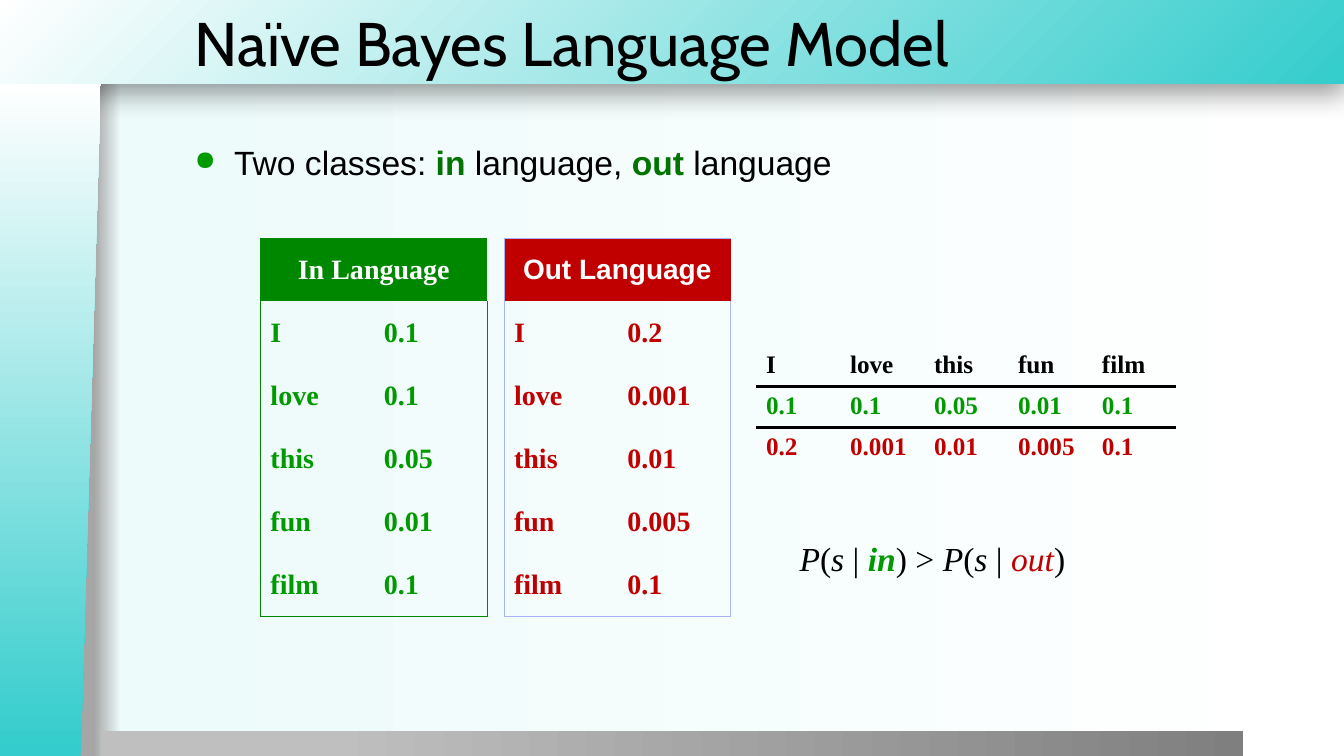
import pptx
import pptx.util
import pptx.oxml
from pptx.dml.color import RGBColor
from pptx.enum.shapes import MSO_SHAPE
from pptx.enum.text import MSO_ANCHOR, PP_ALIGN
from pptx.oxml.ns import nsdecls, qn


class Theme:
    black, white = "000000", "FFFFFF"
    teal, mist = "34CCCC", "EDFBFB"
    shade, bar_light, bar_dark = "A6A6A6", "BFBFBF", "7F7F7F"
    green, frame_green, bold_green = "009900", "008700", "007300"
    red, frame_blue = "C00000", "A7B2FB"
    title_font, body_font, math_font = "Cabin", "Arial", "Times New Roman"
    title, body, cell, small = 44, 24, 20, 18


T = Theme

# Content: runs are (text, colour, bold, italic)
TITLE = [("Naïve Bayes Language Model", T.black, False, False)]
CLASSES = [
    ("Two classes: ", T.black, False, False),
    ("in", T.bold_green, True, False),
    (" language, ", T.black, False, False),
    ("out", T.bold_green, True, False),
    (" language", T.black, False, False),
]
COMPARISON = [
    ("P", T.black, False, True), ("(", T.black, False, False),
    ("s", T.black, False, True), (" | ", T.black, False, False),
    ("in", T.green, True, True), (") > ", T.black, False, False),
    ("P", T.black, False, True), ("(", T.black, False, False),
    ("s", T.black, False, True), (" | ", T.black, False, False),
    ("out", T.red, False, True), (")", T.black, False, False),
]
WORDS = ["I", "love", "this", "fun", "film"]
IN_PROBS = ["0.1", "0.1", "0.05", "0.01", "0.1"]
OUT_PROBS = ["0.2", "0.001", "0.01", "0.005", "0.1"]

# Heading, probabilities, left column, heading fill, frame, text colour, heading font
MODELS = [
    ("In Language", IN_PROBS, 31, T.frame_green, T.frame_green, T.green, T.math_font),
    ("Out Language", OUT_PROBS, 60, T.red, T.frame_blue, T.red, T.body_font),
]
SENTENCE = [(WORDS, T.black), (IN_PROBS, T.green), (OUT_PROBS, T.red)]

# Slide grid: 160 columns by 90 rows
COLS, ROWS = 160, 90
prs = pptx.Presentation()
prs.slide_width = pptx.util.Inches(13.333)
prs.slide_height = pptx.util.Inches(7.5)
UNIT = prs.slide_height / ROWS
NO_STYLE = "{2D5ABB26-0587-4C30-8999-92F81FD0307C}"


def grid(*values):
    return [round(v * UNIT) for v in values]


def set_gradient(fill, holder, stops, corner=False):
    """Gradient along the x axis, or outwards from the bottom right corner."""
    fill.gradient()
    old = next(holder.iter(qn("a:gradFill")))
    marks = "".join(
        f'<a:gs pos="{pos * 1000}"><a:srgbClr val="{color}"/></a:gs>' for pos, color in stops)
    way = ('<a:path path="circle"><a:fillToRect l="100000" t="100000"/></a:path>'
           if corner else '<a:lin ang="0" scaled="0"/>')
    old.getparent().replace(old, pptx.oxml.parse_xml(
        f'<a:gradFill {nsdecls("a")} rotWithShape="1"><a:gsLst>{marks}</a:gsLst>{way}</a:gradFill>'))


def add_panel(s, kind, box, stops, corner=False):
    sp = s.shapes.add_shape(kind, *grid(*box))
    sp.shadow.inherit = False
    sp.line.fill.background()
    set_gradient(sp.fill, sp._element.spPr, stops, corner)
    return sp


def style_run(r, font, size, color, bold=False, italic=False):
    r.font.name, r.font.size = font, pptx.util.Pt(size)
    r.font.bold, r.font.italic = bold, italic
    r.font.color.rgb = RGBColor.from_string(color)


def add_text(s, box, runs, font, size, anchor=MSO_ANCHOR.TOP):
    tf = s.shapes.add_textbox(*grid(*box)).text_frame
    tf.word_wrap, tf.vertical_anchor = True, anchor
    p = tf.paragraphs[0]
    for text, *look in runs:
        r = p.add_run()
        r.text = text
        style_run(r, font, size, *look)
    return p


def add_plain_table(s, rows, cols, box):
    frame = s.shapes.add_table(rows, cols, *grid(*box))
    tbl = frame.table
    tbl.first_row = tbl.horz_banding = False
    next(frame._element.iter(qn("a:tableStyleId"))).text = NO_STYLE
    return tbl


def fill_cell(cell, text, font, size, color, fill=None):
    cell.text = text
    for r in cell.text_frame.paragraphs[0].runs:
        style_run(r, font, size, color, bold=True)
    if fill:
        cell.fill.solid()
        cell.fill.fore_color.rgb = RGBColor.from_string(fill)
    else:
        cell.fill.background()


def set_borders(cell, sides, color, width):
    tcPr = cell._tc.get_or_add_tcPr()
    for side in "LRTB":
        if side in sides:
            tcPr.append(pptx.oxml.parse_xml(
                f'<a:ln{side} {nsdecls("a")} w="{pptx.util.Pt(width)}"><a:solidFill>'
                f'<a:srgbClr val="{color}"/></a:solidFill></a:ln{side}>'))


def add_model(s, heading, probs, left, head_fill, frame, color, head_font):
    data = [(heading, "")] + list(zip(WORDS, probs))
    tbl = add_plain_table(s, len(data), 2, (left, 28.35, 27, 7.5 * len(data)))
    for i, pair in enumerate(data):
        for j, text in enumerate(pair):
            cell = tbl.cell(i, j)
            edges = "LR"[j] + ("T" if i == 0 else "") + ("B" if i == len(data) - 1 else "")
            set_borders(cell, edges, frame, 0.75)
            cell.vertical_anchor = MSO_ANCHOR.MIDDLE
            if i == 0:
                fill_cell(cell, text, head_font, T.cell, T.white, head_fill)
            else:
                fill_cell(cell, text, T.math_font, T.cell, color)
    tbl.cell(0, 0).merge(tbl.cell(0, 1))
    tbl.cell(0, 0).text_frame.paragraphs[0].alignment = PP_ALIGN.CENTER


def add_sentence(s):
    tbl = add_plain_table(s, len(SENTENCE), len(WORDS), (90, 41.15, 50, 4.88 * len(SENTENCE)))
    for i, (values, color) in enumerate(SENTENCE):
        for j, text in enumerate(values):
            cell = tbl.cell(i, j)
            edges = ("T" if i else "") + ("B" if i < len(SENTENCE) - 1 else "")
            set_borders(cell, edges, T.black, 2.25)
            fill_cell(cell, text, T.math_font, T.small, color)


def main():
    s = prs.slides.add_slide(prs.slide_layouts[6])

    # Background, header, footer bar and side strip
    set_gradient(s.background.fill, s._element.cSld,
                 [(7, T.shade), (9, T.mist), (100, T.white)])
    header = add_panel(s, MSO_SHAPE.RECTANGLE, (0, 0, COLS, 10),
                       [(0, T.teal), (100, T.white)], corner=True)
    header._element.spPr.find(qn("a:effectLst")).append(pptx.oxml.parse_xml(
        f'<a:outerShdw {nsdecls("a")} blurRad="{pptx.util.Pt(20)}" dist="{pptx.util.Pt(6)}" '
        'dir="5400000" algn="t" rotWithShape="0"><a:srgbClr val="000000">'
        '<a:alpha val="40000"/></a:srgbClr></a:outerShdw>'))
    add_panel(s, MSO_SHAPE.RECTANGLE, (12, 87, 136, 3), [(20, T.bar_light), (100, T.bar_dark)])
    strip = add_panel(s, MSO_SHAPE.FLOWCHART_MANUAL_INPUT, (-34, 44, 80, 12),
                      [(1, T.teal), (100, T.white)])
    strip.rotation = 270
    strip._element.spPr.find(qn("a:xfrm")).set("flipV", "1")

    # Title and bullet
    add_text(s, (22, 0, 138, 10), TITLE, T.title_font, T.title, MSO_ANCHOR.MIDDLE)
    p = add_text(s, (22, 16.3, 126, 69.5), CLASSES, T.body_font, T.body)
    p.space_before = pptx.util.Pt(2.5)
    pPr = p._p.get_or_add_pPr()
    indent = pptx.util.Inches(0.39)
    pPr.set("marL", str(indent))
    pPr.set("indent", str(-indent))
    for bullet in (f'<a:buClr {nsdecls("a")}><a:srgbClr val="{T.green}"/></a:buClr>',
                   f'<a:buSzPct {nsdecls("a")} val="80000"/>',
                   f'<a:buChar {nsdecls("a")} char="●"/>'):
        pPr.append(pptx.oxml.parse_xml(bullet))

    # Tables and comparison
    for model in MODELS:
        add_model(s, *model)
    add_sentence(s)
    add_text(s, (94, 63.4, 43, 6), COMPARISON, T.math_font, T.body)

    prs.save("out.pptx")


if __name__ == "__main__":
    main()
